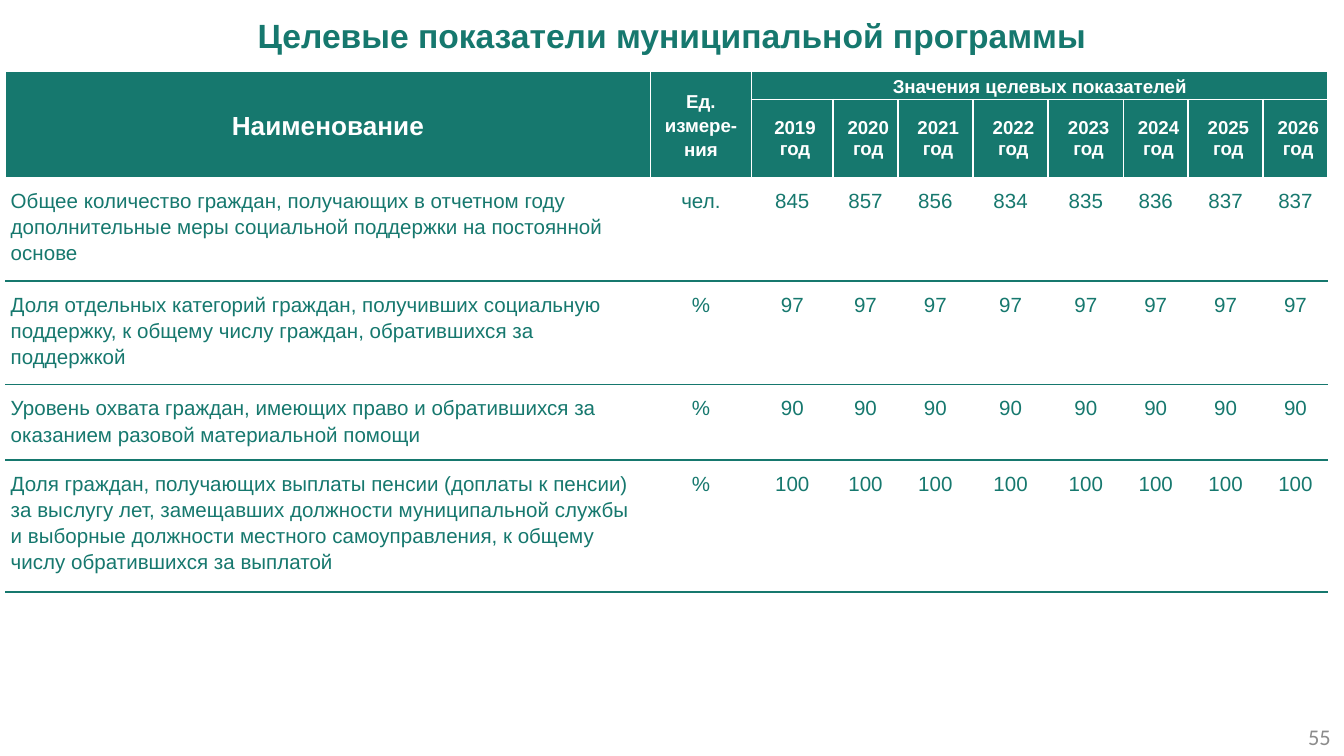
from lxml.etree import SubElement
from pptx import Presentation
from pptx.dml.color import RGBColor
from pptx.enum.text import MSO_ANCHOR as Anchor, PP_ALIGN as Align
from pptx.oxml.ns import qn
from pptx.util import Inches, Pt

COLORS = {"teal": "16786E", "white": "FFFFFF", "gray": "8C8C8C"}
WIDTH = 10
HEIGHT = WIDTH * 9 / 16

TITLE = "Целевые показатели муниципальной программы"
PAGE_NUMBER = "55"
NAME_HEADING = "Наименование"
UNIT_HEADING = "Ед. измере-ния"
VALUES_HEADING = "Значения целевых показателей"
YEARS = range(2019, 2027)
INDICATORS = [
    ("Общее количество граждан, получающих в отчетном году дополнительные меры "
     "социальной поддержки на постоянной основе",
     "чел.", [845, 857, 856, 834, 835, 836, 837, 837]),
    ("Доля отдельных категорий граждан, получивших социальную поддержку, "
     "к общему числу граждан, обратившихся за поддержкой",
     "%", [97] * len(YEARS)),
    ("Уровень охвата граждан, имеющих право и обратившихся за оказанием "
     "разовой материальной помощи",
     "%", [90] * len(YEARS)),
    ("Доля граждан, получающих выплаты пенсии (доплаты к пенсии) за выслугу лет, "
     "замещавших должности муниципальной службы и выборные должности местного "
     "самоуправления, к общему числу обратившихся за выплатой",
     "%", [100] * len(YEARS)),
]

COLUMN_WIDTHS = [4.8, 0.75, 0.61, 0.48, 0.56, 0.56, 0.56, 0.48, 0.56, 0.48]
HEADER_HEIGHTS = [0.06, 0.43]
ROW_HEIGHTS = HEADER_HEIGHTS + [0.46] * len(INDICATORS)
TABLE_LEFT, TABLE_TOP, TABLE_HEIGHT = 0.04, 0.53, 3.73
HEADER_ROWS = len(HEADER_HEIGHTS)


def write(frame, text, size=11, color="teal", bold=False, font="Arial",
          align=Align.CENTER, spacing=None, indent=0):
    frame.word_wrap = True
    paragraph = frame.paragraphs[0]
    paragraph.alignment = align
    if spacing:
        paragraph.line_spacing = spacing
    if indent:
        paragraph._p.get_or_add_pPr().set("marL", str(Inches(indent)))
    run = paragraph.add_run()
    run.text = text
    run.font.size = Pt(size)
    run.font.name = font
    run.font.bold = bold
    run.font.color.rgb = RGBColor.from_string(COLORS[color])


def add_text(slide, text, left, top, width, height, anchor=Anchor.TOP, **style):
    box = slide.shapes.add_textbox(*map(Inches, (left, top, width, height)))
    box.text_frame.vertical_anchor = anchor
    write(box.text_frame, text, **style)


def set_borders(cell, **colors):
    """Draw the sides named L, R, T or B and clear the others."""
    properties = cell._tc.get_or_add_tcPr()
    for position, side in enumerate("LRTB"):
        line = SubElement(properties, qn(f"a:ln{side}"), w=str(Pt(1)))
        if side in colors:
            fill = SubElement(line, qn("a:solidFill"))
            SubElement(fill, qn("a:srgbClr"), val=COLORS[colors[side]])
        else:
            SubElement(line, qn("a:noFill"))
        properties.insert(position, line)


def set_margins(cell, horizontal, vertical):
    cell.margin_left = cell.margin_right = Inches(horizontal)
    cell.margin_top = cell.margin_bottom = Inches(vertical)


def header_cell(cell, text, margins=(0, 0.01), size=10, spacing=1.15, indent=0):
    cell.vertical_anchor = Anchor.MIDDLE
    set_margins(cell, *margins)
    write(cell.text_frame, text, size=size, color="white", bold=True,
          spacing=spacing, indent=indent)
    set_borders(cell, L="white", R="white", T="white")


def body_cell(cell, text, align, borders):
    cell.fill.background()
    set_margins(cell, 0.04, 0.07)
    write(cell.text_frame, text, align=align, spacing=1.15)
    set_borders(cell, **borders)


def fill_header_cell(cell):
    """Colour the cell and keep it low, so that merged-away cells do not stretch the row."""
    cell.fill.solid()
    cell.fill.fore_color.rgb = RGBColor.from_string(COLORS["teal"])
    set_margins(cell, 0, 0)
    cell.text_frame.paragraphs[0]._p.get_or_add_endParaRPr().set("sz", "1000")


def add_indicator_table(slide):
    frame = slide.shapes.add_table(
        len(ROW_HEIGHTS), len(COLUMN_WIDTHS), Inches(TABLE_LEFT), Inches(TABLE_TOP),
        Inches(sum(COLUMN_WIDTHS)), Inches(TABLE_HEIGHT))
    table = frame.table
    table.first_row = table.horz_banding = False
    for column, width in zip(table.columns, COLUMN_WIDTHS):
        column.width = Inches(width)
    for row, height in zip(table.rows, ROW_HEIGHTS):
        row.height = Inches(height)
    frame.height = Inches(TABLE_HEIGHT)

    for row in range(HEADER_ROWS):
        for column in range(len(COLUMN_WIDTHS)):
            fill_header_cell(table.cell(row, column))
    for column in (0, 1):
        table.cell(0, column).merge(table.cell(1, column))
    table.cell(0, 2).merge(table.cell(0, len(COLUMN_WIDTHS) - 1))
    header_cell(table.cell(0, 0), NAME_HEADING, size=14)
    header_cell(table.cell(0, 1), UNIT_HEADING, margins=(0.08, 0))
    header_cell(table.cell(0, 2), VALUES_HEADING)
    for column, year in enumerate(YEARS, start=2):
        header_cell(table.cell(1, column), f"{year} год", spacing=None, indent=0.04)

    for row, (name, unit, values) in enumerate(INDICATORS, start=HEADER_ROWS):
        borders = {"B": "teal"} if row == HEADER_ROWS else {"T": "teal", "B": "teal"}
        for column, text in enumerate([name, unit, *values]):
            align = Align.CENTER if column else Align.LEFT
            body_cell(table.cell(row, column), str(text), align, borders)


def main():
    presentation = Presentation()
    presentation.slide_width, presentation.slide_height = Inches(WIDTH), Inches(HEIGHT)
    slide = presentation.slides.add_slide(presentation.slide_layouts[6])
    add_text(slide, PAGE_NUMBER, 7.67, 5.33, 2.33, 0.3, anchor=Anchor.MIDDLE,
             size=12, color="gray", font="Calibri", align=Align.RIGHT)
    add_indicator_table(slide)
    add_text(slide, TITLE, 0, 0.06, WIDTH, 0.4, size=18, bold=True)
    presentation.save("out.pptx")


if __name__ == "__main__":
    main()
